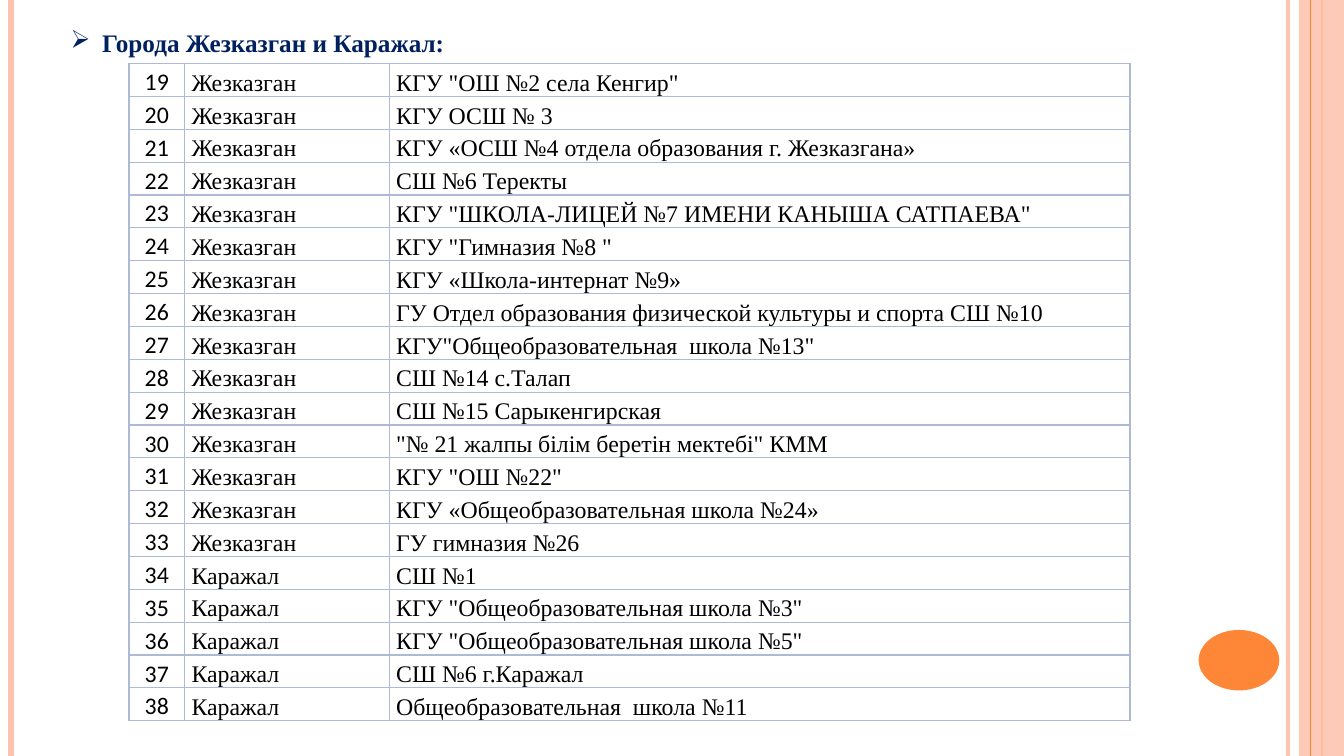
from dataclasses import dataclass

from lxml import etree
from pptx import Presentation
from pptx.dml.color import RGBColor
from pptx.enum import shapes, text
from pptx.oxml import ns
from pptx.util import Pt


@dataclass(frozen=True)
class Theme:
    """Colours, fonts and type sizes of the slide."""
    navy: str = "002060"
    black: str = "000000"
    peach: str = "FEC3AE"
    orange: str = "FE8637"
    grid: str = "AEBAD5"
    serif: str = "Times New Roman"
    sans: str = "Calibri"
    title_size: float = 18
    table_size: float = 17


THEME = Theme()
WIDTH, HEIGHT = 960, 540
TITLE = "Города Жезказган и Каражал:"
FIRST_NUMBER = 19
COLUMNS = (39.6, 146.2, 529.2)
ROW_HEIGHT = 23.47
SCHOOLS = {
    "Жезказган": (
        'КГУ "ОШ №2 села Кенгир"',
        "КГУ ОСШ № 3",
        "КГУ «ОСШ №4 отдела образования г. Жезказгана»",
        "СШ №6 Теректы",
        'КГУ "ШКОЛА-ЛИЦЕЙ №7 ИМЕНИ КАНЫША САТПАЕВА"',
        'КГУ "Гимназия №8 "',
        "КГУ «Школа-интернат №9»",
        "ГУ Отдел образования физической культуры и спорта СШ №10",
        'КГУ"Общеобразовательная  школа №13"',
        "СШ №14 с.Талап",
        "СШ №15 Сарыкенгирская",
        '"№ 21 жалпы білім беретін мектебі" КММ',
        'КГУ "ОШ №22"',
        "КГУ «Общеобразовательная школа №24»",
        "ГУ гимназия №26",
    ),
    "Каражал": (
        "СШ №1",
        'КГУ "Общеобразовательная школа №3"',
        'КГУ "Общеобразовательная школа №5"',
        "СШ №6 г.Каражал",
        "Общеобразовательная  школа №11",
    ),
}


def add_xml(parent, tag, **attrs):
    """Append a DrawingML element with the given attributes."""
    return etree.SubElement(parent, ns.qn(tag), attrs)


def set_opacity(sp, percent):
    """Apply an opacity to the colours of a shape."""
    for color in sp._element.spPr.iter(ns.qn("a:srgbClr")):
        add_xml(color, "a:alpha", val=str(percent * 1000))


def write(tf, content, font=THEME.serif, size=THEME.table_size, color=THEME.black,
          bold=False, align=text.PP_ALIGN.LEFT, spacing=None):
    """Write one formatted paragraph and return it."""
    p = tf.paragraphs[0]
    p.alignment = align
    p.line_spacing = spacing
    r = p.add_run()
    r.text = content
    r.font.name, r.font.size, r.font.bold = font, Pt(size), bold
    r.font.color.rgb = RGBColor.from_string(color)
    return p


def add_stripe(s, x, color, width, opacity=100):
    """Draw a full-height vertical line."""
    sp = s.shapes.add_connector(shapes.MSO_CONNECTOR.STRAIGHT, Pt(x), 0, Pt(x), Pt(HEIGHT))
    sp.line.color.rgb = RGBColor.from_string(color)
    sp.line.width = Pt(width)
    add_xml(sp._element.spPr, "a:effectLst")
    set_opacity(sp, opacity)


def add_block(s, kind, x, y, width, height, color, opacity=100):
    """Draw a filled shape without an outline."""
    sp = s.shapes.add_shape(kind, Pt(x), Pt(y), Pt(width), Pt(height))
    sp.shadow.inherit = False
    sp.fill.solid()
    sp.fill.fore_color.rgb = RGBColor.from_string(color)
    sp.line.fill.background()
    set_opacity(sp, opacity)


def set_title(s):
    """Place the slide title with its arrow bullet."""
    sp = s.shapes.title
    sp.left, sp.top, sp.width, sp.height = Pt(43.2), Pt(15.8), Pt(283.7), Pt(28.8)
    tf = sp.text_frame
    tf.word_wrap = False
    tf.auto_size = text.MSO_AUTO_SIZE.SHAPE_TO_FIT_TEXT
    tf.vertical_anchor = text.MSO_ANCHOR.TOP
    p = write(tf, TITLE, size=THEME.title_size, color=THEME.navy, bold=True)
    pPr = p._p.get_or_add_pPr()
    pPr.set("marL", str(Pt(22.5)))
    pPr.set("indent", str(-Pt(22.5)))
    add_xml(pPr, "a:buChar", char="➢")


def format_cell(cell):
    """Set the insets, borders and empty fill of a table cell."""
    cell.margin_left = cell.margin_right = Pt(5)
    cell.margin_top = cell.margin_bottom = 0
    cell.vertical_anchor = text.MSO_ANCHOR.BOTTOM
    tcPr = cell._tc.get_or_add_tcPr()
    for side in ("a:lnL", "a:lnR", "a:lnT", "a:lnB"):
        line = add_xml(tcPr, side, w=str(Pt(1)))
        add_xml(add_xml(line, "a:solidFill"), "a:srgbClr", val=THEME.grid)
    cell.fill.background()


def add_school_table(s):
    """Build the numbered table of schools by city."""
    schools = [(city, name) for city, names in SCHOOLS.items() for name in names]
    table = s.shapes.add_table(len(schools), len(COLUMNS), Pt(92.2), Pt(45.4),
                               Pt(sum(COLUMNS)), Pt(ROW_HEIGHT * len(schools))).table
    table.first_row = table.horz_banding = False
    for column, width in zip(table.columns, COLUMNS):
        column.width = Pt(width)
    for number, (row, school) in enumerate(zip(table.rows, schools), FIRST_NUMBER):
        row.height = Pt(ROW_HEIGHT)
        for cell in row.cells:
            format_cell(cell)
        number_cell, *school_cells = row.cells
        write(number_cell.text_frame, str(number), font=THEME.sans,
              align=text.PP_ALIGN.CENTER, spacing=1.15)
        for cell, content in zip(school_cells, school):
            write(cell.text_frame, content, spacing=1.15)


def main():
    """Build and save the presentation."""
    prs = Presentation()
    prs.slide_width, prs.slide_height = Pt(WIDTH), Pt(HEIGHT)
    s = prs.slides.add_slide(prs.slide_layouts.get_by_name("Title Only"))
    add_stripe(s, 920, THEME.peach, 3, opacity=93)
    add_stripe(s, 8, THEME.peach, 4.5)
    add_stripe(s, 944, THEME.orange, 1.5)
    add_block(s, shapes.MSO_SHAPE.RECTANGLE, 928, 0, 32, HEIGHT, THEME.peach, opacity=87)
    add_stripe(s, 936, THEME.orange, 0.75)
    add_block(s, shapes.MSO_SHAPE.OVAL, 856.2, 450, 57.6, 43.2, THEME.orange)
    add_school_table(s)
    set_title(s)
    prs.save("out.pptx")


if __name__ == "__main__":
    main()
